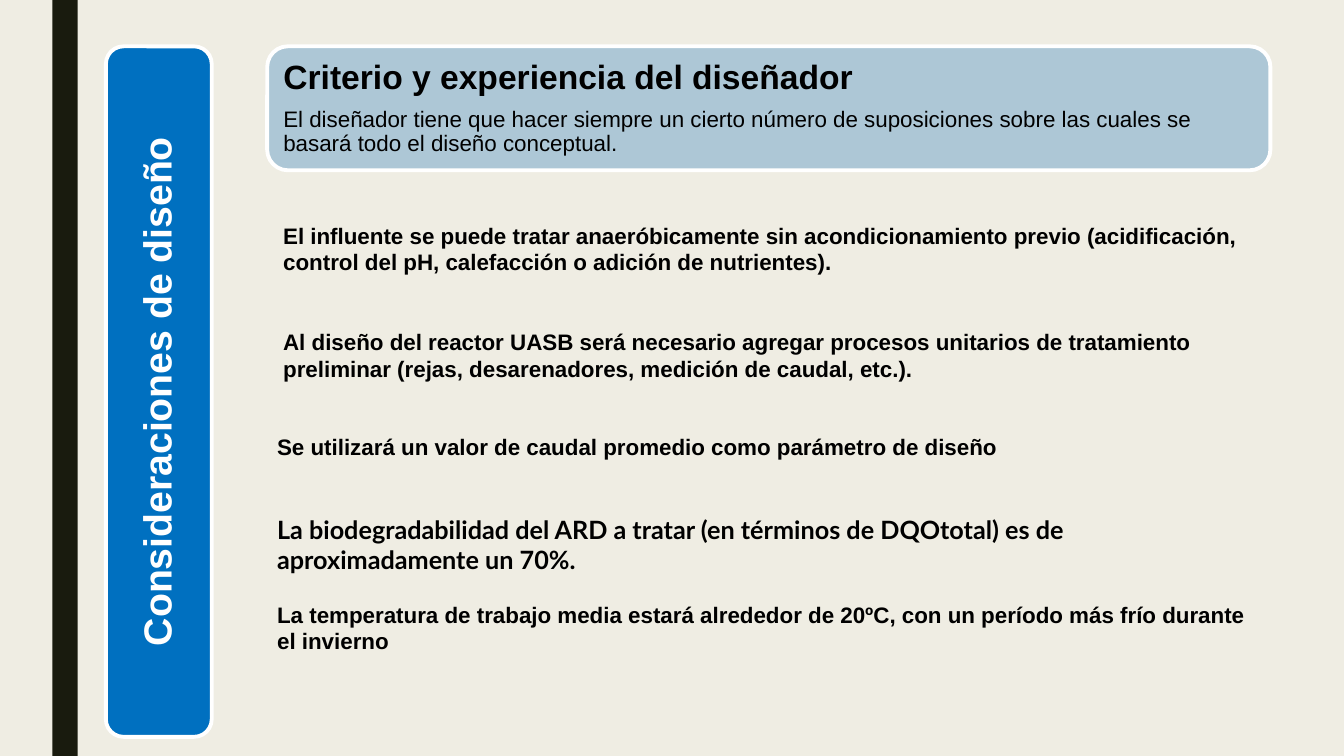
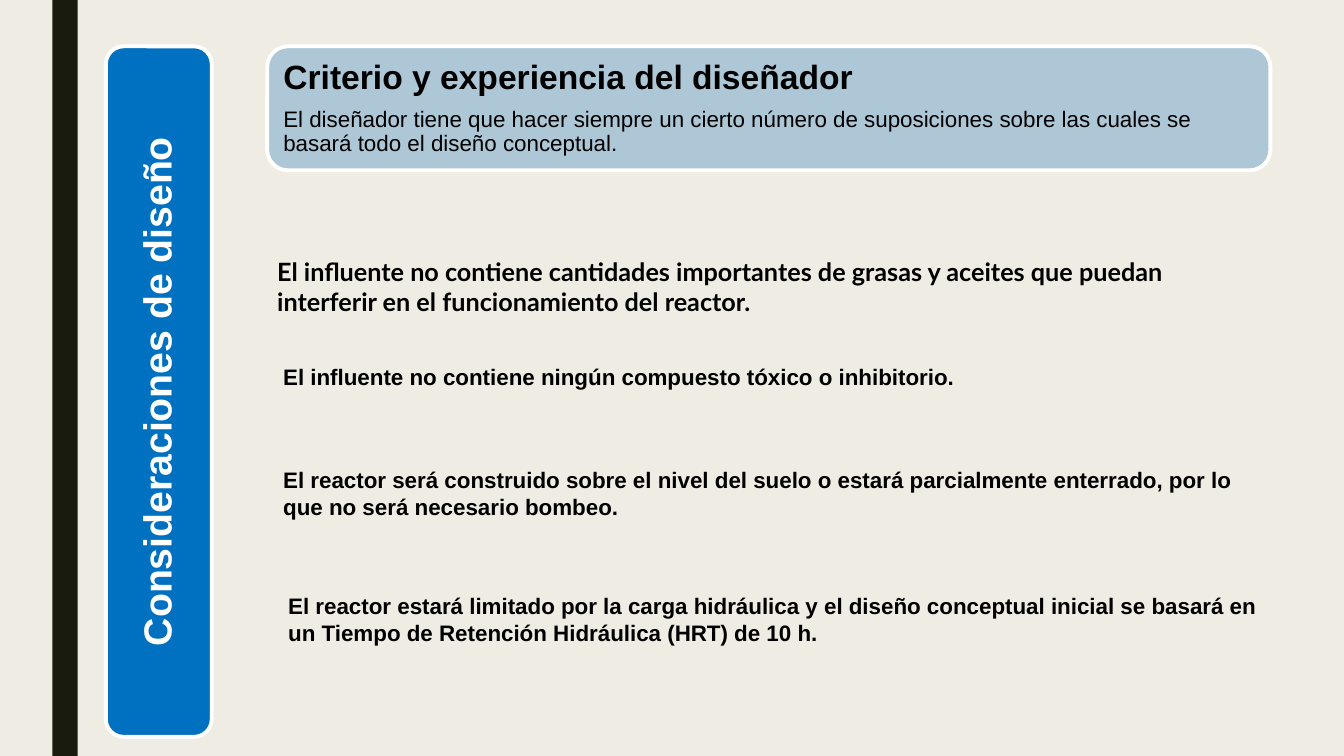
import pptx
import pptx.util
import pptx.dml.color
import pptx.enum.shapes
import pptx.enum.text
import pptx.oxml.ns
import lxml.etree

Inches = pptx.util.Inches
Pt = pptx.util.Pt
RGBColor = pptx.dml.color.RGBColor
AutoSize = pptx.enum.text.MSO_AUTO_SIZE
Shape = pptx.enum.shapes.MSO_SHAPE

CREAM = RGBColor(0xEF, 0xED, 0xE3)
DARK_OLIVE = RGBColor(0x19, 0x1B, 0x0E)
BLUE = RGBColor(0x00, 0x70, 0xC0)
PALE_BLUE = RGBColor(0xAD, 0xC7, 0xD6)
WHITE = RGBColor(0xFF, 0xFF, 0xFF)
BLACK = RGBColor(0, 0, 0)

HEADING = "Consideraciones de diseño"
CRITERION = "Criterio y experiencia del diseñador"
CRITERION_DETAIL = (
    "El diseñador tiene que hacer siempre un cierto número de suposiciones "
    "sobre las cuales se basará todo el diseño conceptual."
)

PANELS = [
    (Shape.RECTANGLE, (0.52, 0, 0.25, 7.5), DARK_OLIVE, None),
    (Shape.ROUNDED_RECTANGLE, (1.05, 0.46, 1.05, 6.85), BLUE, WHITE),
    (Shape.ROUNDED_RECTANGLE, (2.65, 0.46, 9.95, 1.23), PALE_BLUE, WHITE),
]
HEADING_AREA = (1.1, 0.51, 0.95, 6.75)
CRITERION_AREA = (2.71, 0.52, 9.83, 1.11)

ASSUMPTION_WIDTH = 9.85
ONE_LINE, TWO_LINES, TWO_LARGE_LINES = 0.37, 0.64, 0.71
ARIAL = ("Arial", 16)
LATO = ("Lato", 18)

SLIDES = [
    [
        (2.71, 2.15, TWO_LINES, ARIAL,
         "El influente se puede tratar anaeróbicamente sin acondicionamiento previo "
         "(acidificación, control del pH, calefacción o adición de nutrientes)."),
        (2.71, 3.21, TWO_LINES, ARIAL,
         "Al diseño del reactor UASB será necesario agregar procesos unitarios de "
         "tratamiento preliminar (rejas, desarenadores, medición de caudal, etc.)."),
        (2.65, 4.25, ONE_LINE, ARIAL,
         "Se utilizará un valor de caudal promedio como parámetro de diseño"),
        (2.65, 5.05, TWO_LARGE_LINES, LATO,
         "La biodegradabilidad del ARD a tratar (en términos de DQOtotal) es de "
         "aproximadamente un 70%."),
        (2.65, 5.91, TWO_LINES, ARIAL,
         "La temperatura de trabajo media estará alrededor de 20ºC, con un período "
         "más frío durante el invierno"),
    ],
    [
        (2.65, 2.49, TWO_LARGE_LINES, LATO,
         "El influente no contiene cantidades importantes de grasas y aceites que "
         "puedan interferir en el funcionamiento del reactor."),
        (2.71, 3.55, ONE_LINE, ARIAL,
         "El influente no contiene ningún compuesto tóxico o inhibitorio."),
        (2.71, 4.58, TWO_LINES, ARIAL,
         "El reactor será construido sobre el nivel del suelo o estará parcialmente "
         "enterrado, por lo que no será necesario bombeo."),
        (2.76, 5.83, TWO_LINES, ARIAL,
         "El reactor estará limitado por la carga hidráulica y el diseño conceptual "
         "inicial se basará en un Tiempo de Retención Hidráulica (HRT) de 10 h."),
    ],
]


def add_run(paragraph, text, font, size, color=BLACK, bold=True):
    run = paragraph.add_run()
    run.text = text
    run.font.name = font
    run.font.size = Pt(size)
    run.font.bold = bold
    run.font.color.rgb = color


def add_layout_panels(slide):
    layout_tree = slide.slide_layout.shapes._spTree
    for position, (kind, area, fill, outline) in enumerate(PANELS, start=2):
        panel = slide.shapes.add_shape(kind, *map(Inches, area))
        panel.shadow.inherit = False
        panel.fill.solid()
        panel.fill.fore_color.rgb = fill
        if outline is None:
            panel.line.fill.background()
        else:
            panel.line.color.rgb = outline
            panel.line.width = Pt(2.75)
        layout_tree.insert(position, panel._element)


def place(placeholder, area, inset):
    placeholder.left, placeholder.top, placeholder.width, placeholder.height = map(Inches, area)
    frame = placeholder.text_frame
    frame.word_wrap = True
    frame.auto_size = AutoSize.NONE
    frame.vertical_anchor = pptx.enum.text.MSO_ANCHOR.MIDDLE
    frame.margin_left = frame.margin_right = Inches(inset)
    frame.margin_top = frame.margin_bottom = Inches(inset)
    return frame


def tighten(paragraph, space_after=0):
    paragraph.line_spacing = 0.9
    paragraph.space_before = Pt(0)
    paragraph.space_after = Pt(space_after)


def turned(area):
    left, top, width, height = area
    shift = (width - height) / 2
    return left + shift, top - shift, height, width


def add_heading(slide):
    frame = place(slide.shapes.title, turned(HEADING_AREA), 0.12)
    slide.shapes.title.rotation = 270
    heading = frame.paragraphs[0]
    heading.alignment = pptx.enum.text.PP_ALIGN.CENTER
    tighten(heading)
    add_run(heading, HEADING, "Arial", 28, WHITE)


def add_criterion(slide):
    frame = place(slide.placeholders[1], CRITERION_AREA, 0.1)
    criterion, detail = frame.paragraphs[0], frame.add_paragraph()
    tighten(criterion, 8.4)
    tighten(detail)
    for paragraph in (criterion, detail):
        properties = paragraph._p.get_or_add_pPr()
        properties.set("marL", "0")
        properties.set("indent", "0")
        lxml.etree.SubElement(properties, pptx.oxml.ns.qn("a:buNone"))
    add_run(criterion, CRITERION, "Arial", 24)
    add_run(detail, CRITERION_DETAIL, "Arial", 16, bold=False)


def add_assumption(slide, left, top, height, style, text):
    area = (left, top, ASSUMPTION_WIDTH, height)
    frame = slide.shapes.add_textbox(*map(Inches, area)).text_frame
    frame.word_wrap = True
    frame.auto_size = AutoSize.SHAPE_TO_FIT_TEXT
    add_run(frame.paragraphs[0], text, *style)


def main():
    deck = pptx.Presentation()
    deck.slide_width, deck.slide_height = Inches(13.33), Inches(7.5)
    background = deck.slide_master.background.fill
    background.solid()
    background.fore_color.rgb = CREAM

    for number, assumptions in enumerate(SLIDES):
        slide = deck.slides.add_slide(deck.slide_layouts[1])
        if number == 0:
            add_layout_panels(slide)
        add_heading(slide)
        add_criterion(slide)
        for assumption in assumptions:
            add_assumption(slide, *assumption)

    deck.save("out.pptx")


if __name__ == "__main__":
    main()
